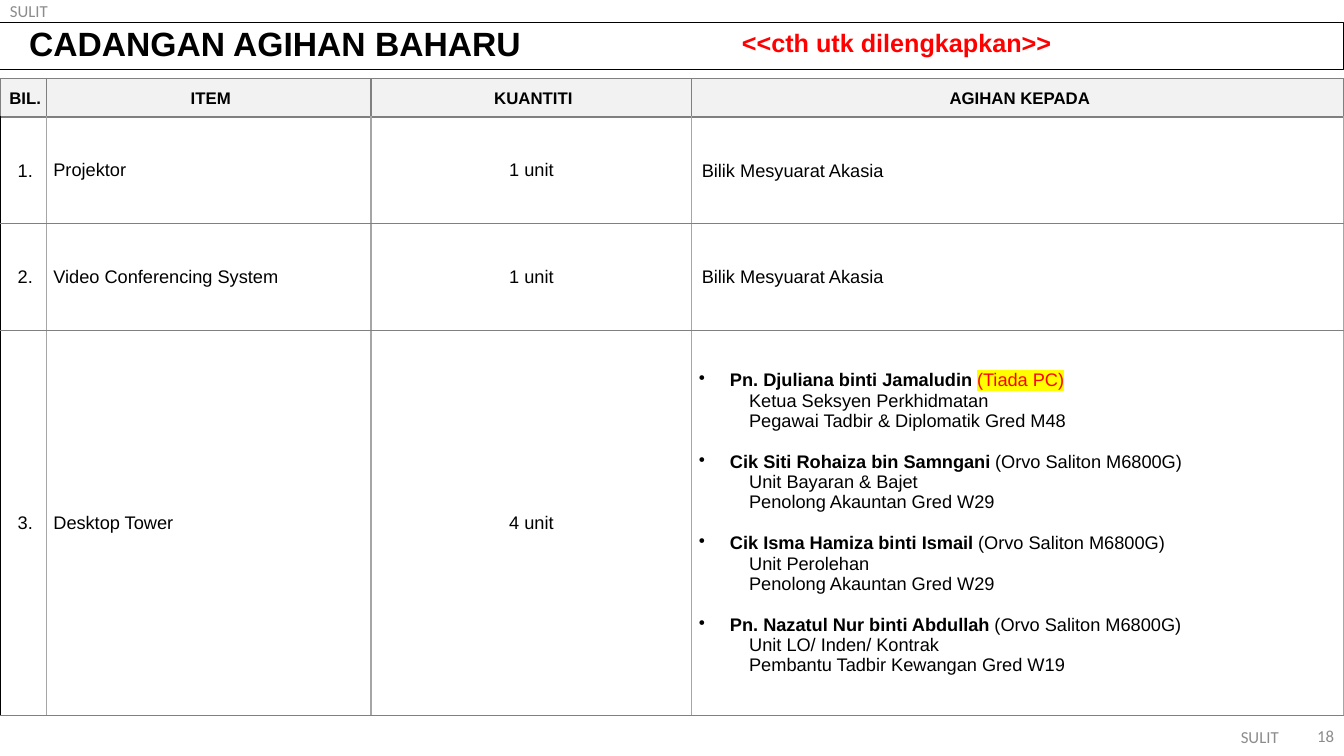
import pptx
import pptx.util
import pptx.dml.color
import pptx.enum.shapes
import pptx.enum.text
import pptx.oxml
import pptx.oxml.ns

WIDE, HIGH = 13.33, 7.5
INK = {"black": "000000", "red": "FF0000", "mark": "FFFF00", "note": "8C8C8C",
       "head": "F2F2F2", "white": "FFFFFF", "rule": "808080", "side": "A6A6A6"}
# Shares of the slide, in percent
COLS = [3.45, 24.16, 23.86, 48.53]
ROWS = [5.07, 14.13, 14.13, 50.93]
HEADS = ["BIL.", "ITEM", "KUANTITI", "AGIHAN KEPADA"]
ROOM = "Bilik Mesyuarat Akasia"
ITEMS = [("Projektor", "1 unit"), ("Video Conferencing System", "1 unit"),
         ("Desktop Tower", "4 unit")]
MODEL = "(Orvo Saliton M6800G)"
STAFF = [
    ("Pn. Djuliana binti Jamaludin ", "(Tiada PC)",
     "Ketua Seksyen Perkhidmatan", "Pegawai Tadbir & Diplomatik Gred M48"),
    ("Cik Siti Rohaiza bin Samngani ", MODEL,
     "Unit Bayaran & Bajet", "Penolong Akauntan Gred W29"),
    ("Cik Isma Hamiza binti Ismail ", MODEL,
     "Unit Perolehan", "Penolong Akauntan Gred W29"),
    ("Pn. Nazatul Nur binti Abdullah ", MODEL,
     "Unit LO/ Inden/ Kontrak", "Pembantu Tadbir Kewangan Gred W19"),
]
ALIGN = pptx.enum.text.PP_ALIGN
MID = pptx.enum.text.MSO_ANCHOR.MIDDLE
TOP = pptx.enum.text.MSO_ANCHOR.TOP


def wide(share):
    return pptx.util.Inches(WIDE * share / 100)


def high(share):
    return pptx.util.Inches(HIGH * share / 100)


def place(left, top, width, height):
    return wide(left), high(top), wide(width), high(height)


def tint(name):
    return pptx.dml.color.RGBColor.from_string(INK[name])


def node(tag, body=""):
    space = pptx.oxml.ns.nsdecls("a")
    return pptx.oxml.parse_xml(f"<a:{tag} {space}>{body}</a:{tag}>")


def paint(name):
    return f'<a:srgbClr val="{INK[name]}"/>'


def write(para, text, size=13, font="Arial", color="black", bold=False,
          mark=None, align=ALIGN.LEFT):
    """Add one run of text to a paragraph."""
    para.alignment = align
    run = para.add_run()
    run.text = text
    run.font.size = pptx.util.Pt(size)
    run.font.bold = bold
    run.font.color.rgb = tint(color)
    if mark:
        run._r.rPr.append(node("highlight", paint(mark)))
    run.font.name = font


def indent(para, left, first=0, dot=False):
    props = para._p.get_or_add_pPr()
    props.set("marL", str(pptx.util.Inches(left)))
    props.set("indent", str(pptx.util.Inches(first)))
    if dot:
        bullet = node("buChar")
        bullet.set("char", "•")
        props.append(bullet)


def label(slide, spot, text, anchor=MID, **form):
    frame = slide.shapes.add_textbox(*place(*spot)).text_frame
    frame.word_wrap = True
    frame.vertical_anchor = anchor
    write(frame.paragraphs[0], text, **form)


def title(slide, spot, text):
    kind = pptx.enum.shapes.MSO_SHAPE.RECTANGLE
    bar = slide.shapes.add_shape(kind, *place(*spot))
    bar.shadow.inherit = False
    bar.fill.background()
    bar.line.color.rgb = tint("black")
    bar.line.width = pptx.util.Pt(0.75)
    bar.text_frame.vertical_anchor = MID
    para = bar.text_frame.paragraphs[0]
    para.line_spacing = 0.9
    indent(para, 0.19)
    write(para, text, size=24, bold=True)


def edge(cell, sides):
    """Draw cell borders from (colour, points) given left, right, top, bottom."""
    props = cell._tc.get_or_add_tcPr()
    for spot, (side, (color, points)) in enumerate(zip("LRTB", sides)):
        line = node(f"ln{side}", f"<a:solidFill>{paint(color)}</a:solidFill>")
        line.set("w", str(pptx.util.Pt(points)))
        props.insert(spot, line)


def style(cell, fill, sides, inset):
    cell.fill.solid()
    cell.fill.fore_color.rgb = tint(fill)
    cell.vertical_anchor = MID
    left, top, low = map(pptx.util.Inches, inset)
    cell.margin_left = cell.margin_right = left
    cell.margin_top, cell.margin_bottom = top, low
    edge(cell, sides)
    return cell.text_frame.paragraphs[0]


def people(frame):
    para = frame.paragraphs[0]
    for rank, (name, note, *posts) in enumerate(STAFF):
        if rank:
            para = frame.add_paragraph()
            para.space_before = pptx.util.Pt(14.6)
        indent(para, 0.31, -0.31, dot=True)
        write(para, name, bold=True)
        free = note != MODEL
        write(para, note, color="red" if free else "black",
              mark="mark" if free else None)
        for post in posts:
            para = frame.add_paragraph()
            para.level = 1
            indent(para, 0.5)
            write(para, post)


def grid(slide):
    spot = place(0, 10.4, sum(COLS), sum(ROWS))
    table = slide.shapes.add_table(len(ROWS), len(COLS), *spot).table
    table.first_row = table.horz_banding = False
    for col, share in zip(table.columns, COLS):
        col.width = wide(share)
    for row, share in zip(table.rows, ROWS):
        row.height = high(share)

    rule, side, edge_left = ("rule", 1), ("side", 1), ("black", 0.5)
    tight, snug, loose = (0.01, 0.01, 0), (0.07, 0, 0), (0.1, 0.05, 0.05)
    for col, head in enumerate(HEADS):
        para = style(table.cell(0, col), "head", [rule] * 4, tight)
        indent(para, 0.04)
        write(para, head, size=12, bold=True, align=ALIGN.CENTER)

    body = [side, side, rule, rule]
    for row, (item, count) in enumerate(ITEMS, 1):
        para = style(table.cell(row, 0), "white", [edge_left] + body[1:], tight)
        indent(para, 0.04)
        write(para, f"{row}.", align=ALIGN.CENTER)
        write(style(table.cell(row, 1), "white", body, snug), item)
        write(style(table.cell(row, 2), "white", body, snug), count,
              align=ALIGN.CENTER)
        last = table.cell(row, 3)
        if row == len(ITEMS):
            style(last, "white", body, snug)
            people(last.text_frame)
        else:
            para = style(last, "white", body, loose)
            para.line_spacing = pptx.util.Pt(15.1)
            write(para, ROOM)


def main():
    deck = pptx.Presentation()
    deck.slide_width, deck.slide_height = wide(100), high(100)
    slide = deck.slides.add_slide(deck.slide_layouts[6])
    small = {"size": 12, "font": "Calibri", "color": "note"}
    label(slide, (90.55, 94.8, 5.33, 5.33), "SULIT", align=ALIGN.RIGHT, **small)
    label(slide, (0, 0, 5.33, 2.93), "SULIT", **small)
    title(slide, (0, 2.93, 100, 6.27), "CADANGAN AGIHAN BAHARU")
    label(slide, (95.87, 94.67, 4.13, 5.33), "18", align=ALIGN.RIGHT, **small)
    grid(slide)
    label(slide, (54.46, 2.93, 38.93, 5.33), "<<cth utk dilengkapkan>>",
          anchor=TOP, size=18, color="red", bold=True)
    deck.save("out.pptx")


if __name__ == "__main__":
    main()
